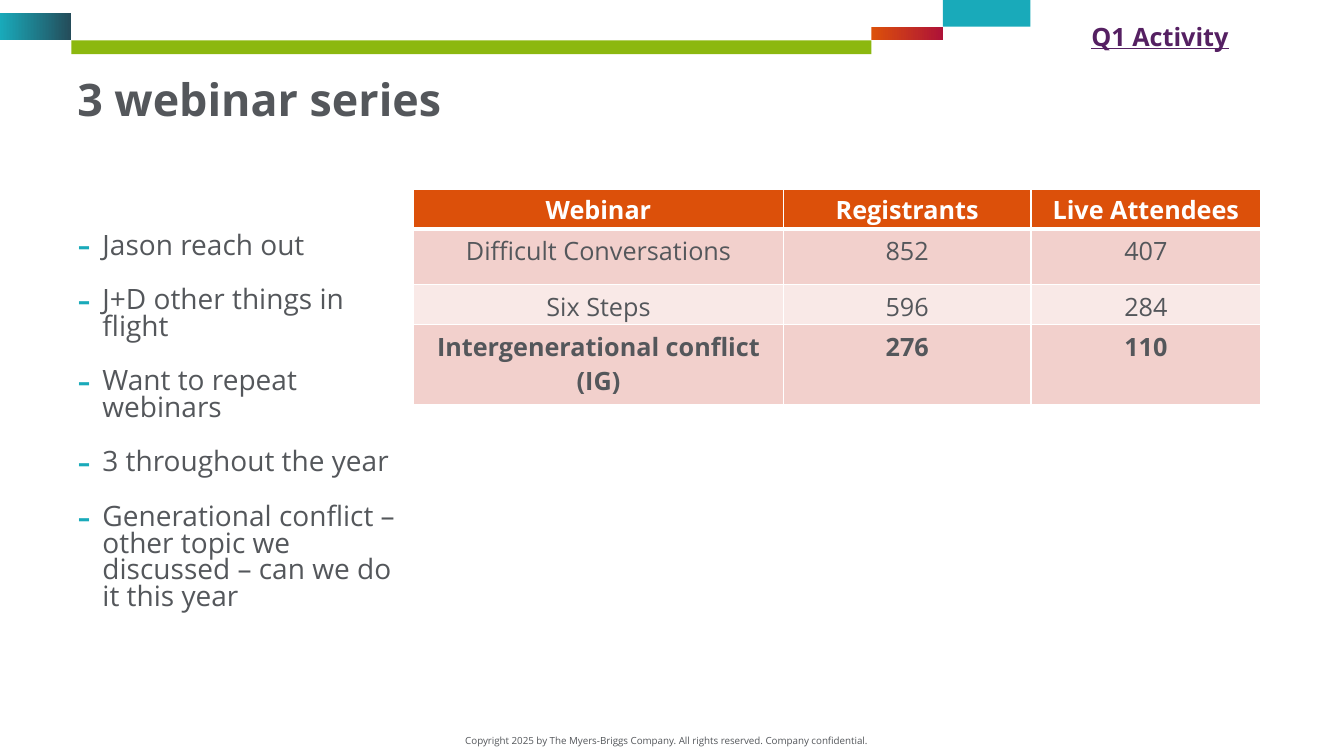
from lxml import etree
from pptx import Presentation
from pptx.dml.color import RGBColor
from pptx.enum.shapes import MSO_SHAPE
from pptx.enum.text import MSO_ANCHOR, MSO_AUTO_SIZE, PP_ALIGN
from pptx.oxml.ns import qn
from pptx.util import Pt

RECTANGLE = MSO_SHAPE.RECTANGLE
TOP, MIDDLE = MSO_ANCHOR.TOP, MSO_ANCHOR.MIDDLE
LEFT, CENTER = PP_ALIGN.LEFT, PP_ALIGN.CENTER
NO_AUTOFIT = MSO_AUTO_SIZE.NONE

FONT = "Open Sans"
GREY = RGBColor(0x54, 0x57, 0x5B)
WHITE = RGBColor(0xFF, 0xFF, 0xFF)
GREEN = RGBColor(0x8C, 0xB8, 0x0F)
TEAL = RGBColor(0x19, 0xAA, 0xBA)
NAVY = RGBColor(0x24, 0x4C, 0x5A)
ORANGE = RGBColor(0xDC, 0x50, 0x0A)
CRIMSON = RGBColor(0xAE, 0x12, 0x37)
PURPLE = RGBColor(0x55, 0x20, 0x62)
PINK = RGBColor(0xF2, 0xD0, 0xCC)
PALE_PINK = RGBColor(0xF9, 0xE9, 0xE7)

SLIDE_WIDTH, SLIDE_HEIGHT = 960, 540
COPYRIGHT = ("Copyright 2025 by The Myers-Briggs Company. "
             "All rights reserved. Company confidential.")
NOTES = [
    "Jason reach out",
    "J+D other things in flight",
    "Want to repeat webinars",
    "3 throughout the year",
    "Generational conflict – other topic we discussed – can we do it this year",
]
WEBINARS = [
    ("Webinar", "Registrants", "Live Attendees"),
    ("Difficult Conversations", "852", "407"),
    ("Six Steps", "596", "284"),
    ("Intergenerational conflict (IG)", "276", "110"),
]
COLUMN_WIDTHS = (264, 177, 164)
ROW_HEIGHTS = (28, 40, 28.5, 57)


def add_run(paragraph, text, size, color=GREY, bold=False, underline=False):
    run = paragraph.add_run()
    run.text = text
    font = run.font
    font.name, font.size = FONT, Pt(size)
    font.bold, font.underline = bold, underline
    font.color.rgb = color


def place(placeholder, box):
    """Move a placeholder to its box and return its top-anchored text frame."""
    left, top, width, height = map(Pt, box)
    placeholder.left, placeholder.top = left, top
    placeholder.width, placeholder.height = width, height
    frame = placeholder.text_frame
    frame.auto_size = NO_AUTOFIT
    frame.vertical_anchor = TOP
    frame.word_wrap = True
    return frame


def add_band(slide, box, colors):
    """Draw a bar, solid for one colour and left-to-right gradient for two."""
    band = slide.shapes.add_shape(RECTANGLE, *map(Pt, box))
    band.shadow.inherit = False
    band.line.fill.background()
    if len(colors) == 1:
        band.fill.solid()
        band.fill.fore_color.rgb = colors[0]
        return
    band.fill.gradient()
    band.fill.gradient_angle = 0
    for position, (stop, color) in enumerate(zip(band.fill.gradient_stops, colors)):
        stop.position = position
        stop.color.rgb = color


def add_header_bands(slide, box):
    left, top, width, step = box
    green_left, orange_left, teal_left = left + 51, left + 622.5, left + 673.5
    low = top + 2 * step
    add_band(slide, (green_left, low + step, orange_left - green_left, step), [GREEN])
    add_band(slide, (left, low - step, green_left - left, 2 * step), [TEAL, NAVY])
    add_band(slide, (teal_left, top, left + width - teal_left, 2 * step), [TEAL])
    add_band(slide, (orange_left, low, teal_left - orange_left, step), [ORANGE, CRIMSON])


def add_label(slide, box, text, size, alignment=LEFT, **style):
    label = slide.shapes.add_textbox(*map(Pt, box))
    label.text_frame.word_wrap = True
    paragraph = label.text_frame.paragraphs[0]
    paragraph.alignment = alignment
    add_run(paragraph, text, size, **style)


def fill_title(slide, box, text):
    paragraph = place(slide.shapes.title, box).paragraphs[0]
    paragraph.alignment = LEFT
    paragraph.line_spacing = 0.9
    add_run(paragraph, text, 32, bold=True)


def add_dash_bullet(paragraph):
    properties = paragraph._p.get_or_add_pPr()
    properties.set("marL", str(Pt(18)))
    properties.set("indent", str(-Pt(18)))
    bullet_color = etree.SubElement(properties, qn("a:buClr"))
    etree.SubElement(bullet_color, qn("a:srgbClr"), val=str(TEAL))
    etree.SubElement(properties, qn("a:buSzPct"), val="150000")
    etree.SubElement(properties, qn("a:buFont"), typeface=FONT)
    etree.SubElement(properties, qn("a:buChar"), char="-")


def fill_notes(slide, box, notes):
    frame = place(slide.placeholders[1], box)
    for index, note in enumerate(notes):
        paragraph = frame.add_paragraph() if index else frame.paragraphs[0]
        add_dash_bullet(paragraph)
        paragraph.alignment = LEFT
        paragraph.line_spacing = 0.79
        paragraph.space_before = Pt(20 if index else 0)
        add_run(paragraph, note, 20)


def add_cell_borders(cell, widths):
    """Draw white borders; widths are for left, right, top and bottom."""
    properties = cell._tc.get_or_add_tcPr()
    for side, width in zip("LRTB", widths):
        border = etree.SubElement(properties, qn(f"a:ln{side}"), w=str(Pt(width)))
        solid = etree.SubElement(border, qn("a:solidFill"))
        etree.SubElement(solid, qn("a:srgbClr"), val=str(WHITE))


def add_webinar_table(slide, box, rows):
    table = slide.shapes.add_table(len(rows), len(rows[0]), *map(Pt, box)).table
    for column, width in zip(table.columns, COLUMN_WIDTHS):
        column.width = Pt(width)
    for row, height in zip(table.rows, ROW_HEIGHTS):
        row.height = Pt(height)
    last = len(rows) - 1
    for r, texts in enumerate(rows):
        is_header = r == 0
        fill = ORANGE if is_header else PINK if r % 2 else PALE_PINK
        for c, text in enumerate(texts):
            cell = table.cell(r, c)
            add_cell_borders(cell, (1, 1, 3 if r == 1 else 1, 3 if is_header else 1))
            cell.fill.solid()
            cell.fill.fore_color.rgb = fill
            cell.margin_top = Pt(0 if is_header else 3.6)
            cell.margin_bottom = Pt(0)
            cell.vertical_anchor = MIDDLE if is_header else TOP
            paragraph = cell.text_frame.paragraphs[0]
            paragraph.alignment = CENTER
            add_run(paragraph, text, 18, WHITE if is_header else GREY, r in (0, last))


def build_webinar_slide(slide):
    add_header_bands(slide, (0, -0.5, 736, 9.8))
    add_label(slide, (321, 521.5, 310, 16), COPYRIGHT, 7, CENTER)
    fill_title(slide, (48, 52, 814, 71), "3 webinar series")
    fill_notes(slide, (48, 163.5, 248, 163), NOTES)
    add_label(slide, (772.5, 11.5, 148, 29), "Q1 Activity", 18,
              color=PURPLE, bold=True, underline=True)
    add_webinar_table(slide, (295.5, 135.5, sum(COLUMN_WIDTHS), sum(ROW_HEIGHTS)), WEBINARS)


def main():
    presentation = Presentation()
    presentation.slide_width, presentation.slide_height = Pt(SLIDE_WIDTH), Pt(SLIDE_HEIGHT)
    build_webinar_slide(presentation.slides.add_slide(presentation.slide_layouts[1]))
    presentation.save("out.pptx")


if __name__ == "__main__":
    main()
